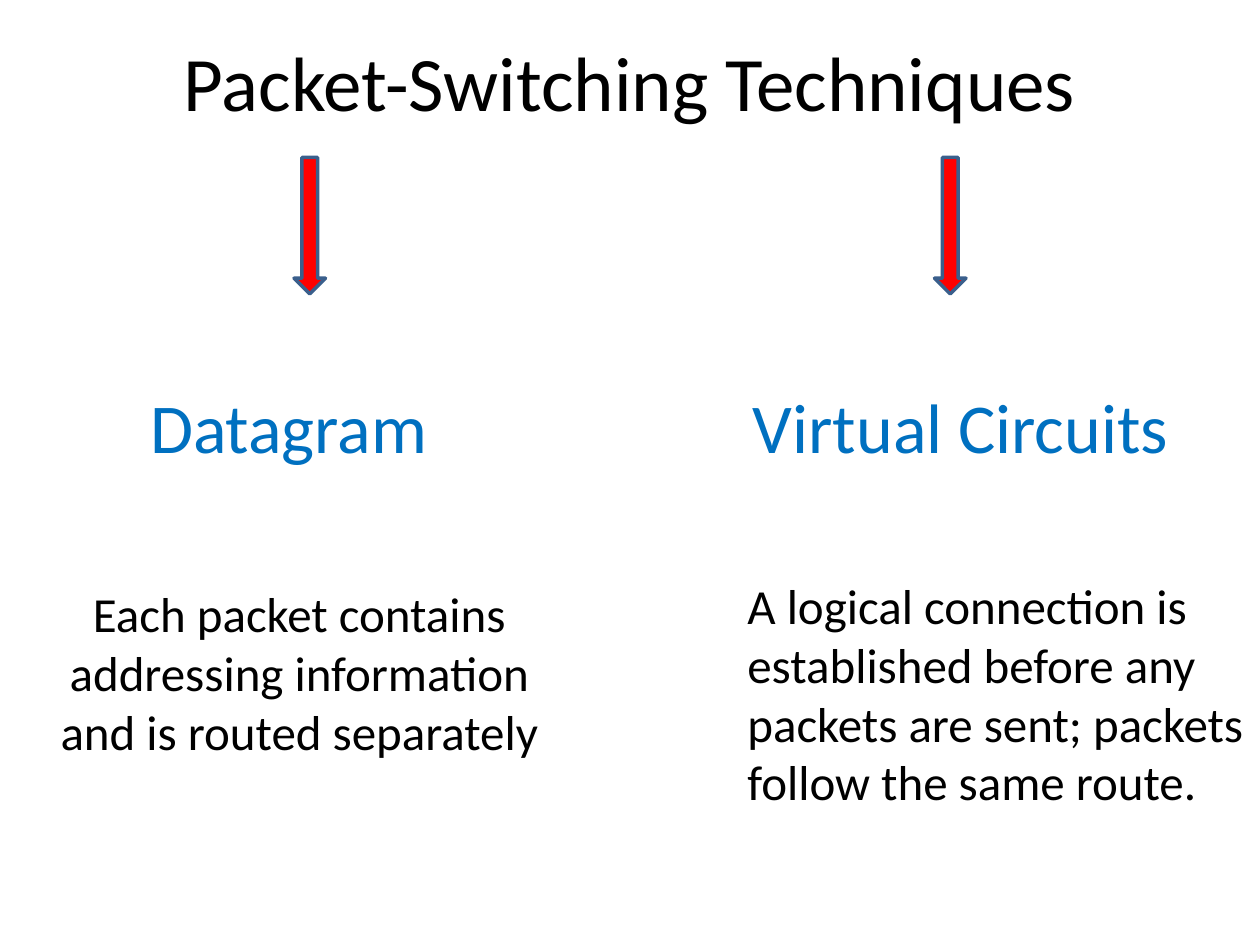
from dataclasses import dataclass

from pptx import Presentation
from pptx.dml.color import RGBColor
from pptx.enum.shapes import MSO_SHAPE as Preset
from pptx.enum.text import MSO_ANCHOR as Anchor, PP_ALIGN as Align
from pptx.util import Pt

BLACK, WHITE, BLUE = "000000", "FFFFFF", "0070C0"
RED, ARROW_EDGE = "FF0000", "3A5F8C"


@dataclass
class Box:
    left: float
    top: float
    width: float
    height: float

    def lengths(self) -> tuple:
        return Pt(self.left), Pt(self.top), Pt(self.width), Pt(self.height)


@dataclass
class Technique:
    name: str
    name_box: Box
    description: str
    description_box: Box
    arrow_left: float
    align: Align = Align.CENTER
    level: int = 0


TECHNIQUES = [
    Technique(
        "Datagram", Box(30, 222, 270, 42),
        "Each packet contains addressing information and is routed separately",
        Box(24, 276, 294, 216), arrow_left=168,
    ),
    Technique(
        "Virtual Circuits", Box(390, 222, 318, 42),
        "A logical connection is established before any packets are sent; "
        "packets follow the same route.",
        Box(348, 294, 372, 204), arrow_left=534, align=Align.LEFT, level=2,
    ),
]


def rgb(code: str) -> RGBColor:
    return RGBColor.from_string(code)


def write(shape, text: str, *, size: float, color: str = BLACK,
          align: Align = Align.CENTER, level: int = 0) -> None:
    frame = shape.text_frame
    frame.word_wrap = True
    frame.vertical_anchor = Anchor.MIDDLE
    paragraph = frame.paragraphs[0]
    paragraph.alignment = align
    if level:
        paragraph.level = level
        properties = paragraph._p.get_or_add_pPr()
        properties.set("marL", str(Pt(36 * level)))
        properties.set("indent", "0")
    run = paragraph.add_run()
    run.text = text
    run.font.name = "Calibri"
    run.font.size = Pt(size)
    run.font.color.rgb = rgb(color)


def add_filled(slide, preset: Preset, box: Box, fill: str, edge: str = ""):
    shape = slide.shapes.add_shape(preset, *box.lengths())
    shape.shadow.inherit = False
    shape.fill.solid()
    shape.fill.fore_color.rgb = rgb(fill)
    if edge:
        shape.line.color.rgb = rgb(edge)
        shape.line.width = Pt(2)
    else:
        shape.line.fill.background()
    return shape


def add_technique(slide, technique: Technique) -> None:
    description = add_filled(slide, Preset.RECTANGLE,
                             technique.description_box, WHITE)
    write(description, technique.description, size=28,
          align=technique.align, level=technique.level)
    name = slide.shapes.add_textbox(*technique.name_box.lengths())
    write(name, technique.name, size=40, color=BLUE)
    add_filled(slide, Preset.DOWN_ARROW,
               Box(technique.arrow_left, 90, 18, 78), RED, ARROW_EDGE)


def main() -> None:
    deck = Presentation()
    deck.slide_width, deck.slide_height = Pt(720), Pt(540)
    slide = deck.slides.add_slide(deck.slide_layouts[5])
    title = slide.shapes.title
    title.left, title.top, title.width, title.height = Box(36, 14.4, 648, 63).lengths()
    write(title, "Packet-Switching Techniques", size=44)
    for technique in TECHNIQUES:
        add_technique(slide, technique)
    deck.save("out.pptx")


if __name__ == "__main__":
    main()
